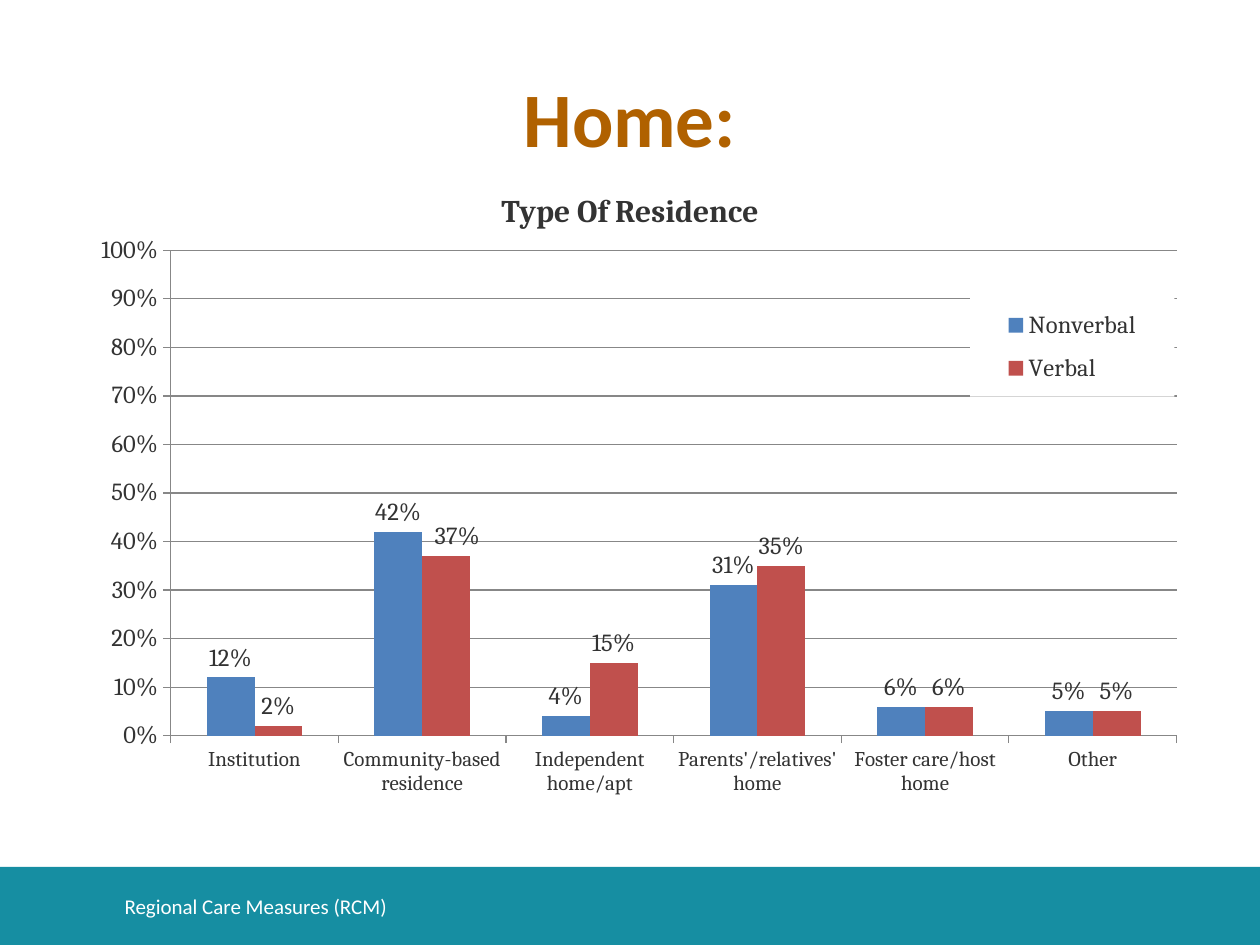
from lxml import etree
from pptx import Presentation
from pptx.chart.data import CategoryChartData
from pptx.dml.color import RGBColor
from pptx.enum.chart import XL_CHART_TYPE, XL_LABEL_POSITION, XL_LEGEND_POSITION, XL_TICK_MARK
from pptx.enum.shapes import MSO_SHAPE
from pptx.enum.text import MSO_ANCHOR, PP_ALIGN
from pptx.oxml import parse_xml
from pptx.oxml.ns import qn
from pptx.util import Inches, Pt

COLUMNS = XL_CHART_TYPE.COLUMN_CLUSTERED
OUTSIDE_END = XL_LABEL_POSITION.OUTSIDE_END
TICK_OUT = XL_TICK_MARK.OUTSIDE
TICK_NONE = XL_TICK_MARK.NONE
LEGEND_RIGHT = XL_LEGEND_POSITION.RIGHT
RECTANGLE = MSO_SHAPE.RECTANGLE
MIDDLE = MSO_ANCHOR.MIDDLE
LEFT, CENTER = PP_ALIGN.LEFT, PP_ALIGN.CENTER
CHART_NS = "http://schemas.openxmlformats.org/drawingml/2006/chart"
GRAY = "878787"


def rgb(value):
    return RGBColor.from_string(value)


def manual_layout(**settings):
    layout = parse_xml(f'<c:layout xmlns:c="{CHART_NS}"><c:manualLayout/></c:layout>')
    for name, value in settings.items():
        etree.SubElement(layout[0], qn("c:" + name)).set("val", str(value))
    return layout


prs = Presentation()
prs.slide_width, prs.slide_height = Inches(10), Inches(7.5)
s = prs.slides.add_slide(prs.slide_layouts[6])

# Footer band
band = s.shapes.add_shape(RECTANGLE, Inches(0), Inches(6.88), Inches(10), Inches(0.62))
band.shadow.inherit = False
band.fill.solid()
band.fill.fore_color.rgb = rgb("168EA2")
band.line.fill.background()

# Heading and footer text
texts = [
    ("Home:", 0.5, 0.3, 9, 1.25, 44, "B06100", True, CENTER),
    ("Regional Care Measures (RCM)", 0.89, 6.99, 7.4, 0.4, 12, "FFFFFF", False, LEFT),
]
for text, x, y, w, h, size, color, bold, align in texts:
    sp = s.shapes.add_textbox(Inches(x), Inches(y), Inches(w), Inches(h))
    tf = sp.text_frame
    tf.word_wrap = True
    tf.vertical_anchor = MIDDLE
    p = tf.paragraphs[0]
    p.alignment = align
    r = p.add_run()
    r.text = text
    r.font.name, r.font.size, r.font.bold = "Calibri", Pt(size), bold
    r.font.color.rgb = rgb(color)

# Chart data
data = CategoryChartData(number_format="0%")
data.categories = ["Institution", "Community-based residence", "Independent home/apt",
                   "Parents'/relatives' home", "Foster care/host home", "Other"]
data.add_series("Nonverbal", [0.12, 0.42, 0.04, 0.31, 0.06, 0.05])
data.add_series("Verbal", [0.02, 0.37, 0.15, 0.35, 0.06, 0.05])
chart = s.shapes.add_chart(COLUMNS, Inches(0.5), Inches(1.3), Inches(9), Inches(5.28), data).chart
chart.font.name, chart.font.size = "Cambria", Pt(10)
chart.font.color.rgb = rgb("333333")

# Chart title
chart.has_title = True
p = chart.chart_title.text_frame.paragraphs[0]
r = p.add_run()
r.text = "Type Of Residence"
r.font.name, r.font.size, r.font.bold = "Cambria", Pt(18), True
r.font.color.rgb = rgb("333333")

# Axes and gridlines
cat_axis, val_axis = chart.category_axis, chart.value_axis
val_axis.minimum_scale, val_axis.maximum_scale, val_axis.major_unit = 0, 1, 0.1
val_axis.has_major_gridlines = True
val_axis.tick_labels.number_format = "0%"
val_axis.tick_labels.number_format_is_linked = False
for axis, size in ((cat_axis, 12), (val_axis, 14)):
    axis.major_tick_mark, axis.minor_tick_mark = TICK_OUT, TICK_NONE
    axis.tick_labels.font.size = Pt(size)
for part in (cat_axis, val_axis, val_axis.major_gridlines):
    part.format.line.color.rgb = rgb(GRAY)
    part.format.line.width = Pt(0.75)

# Columns and value labels
plot = chart.plots[0]
plot.gap_width, plot.overlap = 150, 0
plot.vary_by_categories = False
for series, color in zip(plot.series, ("4F81BD", "C0504D")):
    series.format.fill.solid()
    series.format.fill.fore_color.rgb = rgb(color)
    series.invert_if_negative = False
    labels = series.data_labels
    labels.show_value = True
    labels.number_format, labels.number_format_is_linked = "0%", False
    labels.position = OUTSIDE_END
    labels.font.size = Pt(14)

# The 37% label sits slightly right of its column
label = plot.series[1].points[1].data_label
label.font.size = Pt(14)
label.position = OUTSIDE_END
d_lbl = plot.series[1].data_labels._element.find(qn("c:dLbl"))
d_lbl.insert(1, manual_layout(x=0.01, y=0))
d_lbl.insert(2, parse_xml(f'<c:numFmt xmlns:c="{CHART_NS}" formatCode="0%" sourceLinked="0"/>'))

# Legend on a white panel over the plot
chart.has_legend = True
legend = chart.legend
legend.position, legend.include_in_layout = LEGEND_RIGHT, False
legend.font.size = Pt(14)
legend._element.find(qn("c:legendPos")).addnext(
    manual_layout(xMode="edge", yMode="edge", x=0.8, y=0.2, w=0.18, h=0.15))
legend._element.find(qn("c:txPr")).addprevious(parse_xml(
    f'<c:spPr xmlns:c="{CHART_NS}" xmlns:a="http://schemas.openxmlformats.org/drawingml/2006/main">'
    '<a:solidFill><a:srgbClr val="FFFFFF"/></a:solidFill><a:ln><a:noFill/></a:ln></c:spPr>'))

# Plot area placement
plot_area = chart._chartSpace.chart.plotArea
for old in plot_area.findall(qn("c:layout")):
    plot_area.remove(old)
plot_area.insert(0, manual_layout(layoutTarget="inner", xMode="edge", yMode="edge",
                                  x=0.095, y=0.13, w=0.887, h=0.73))

prs.save("out.pptx")
